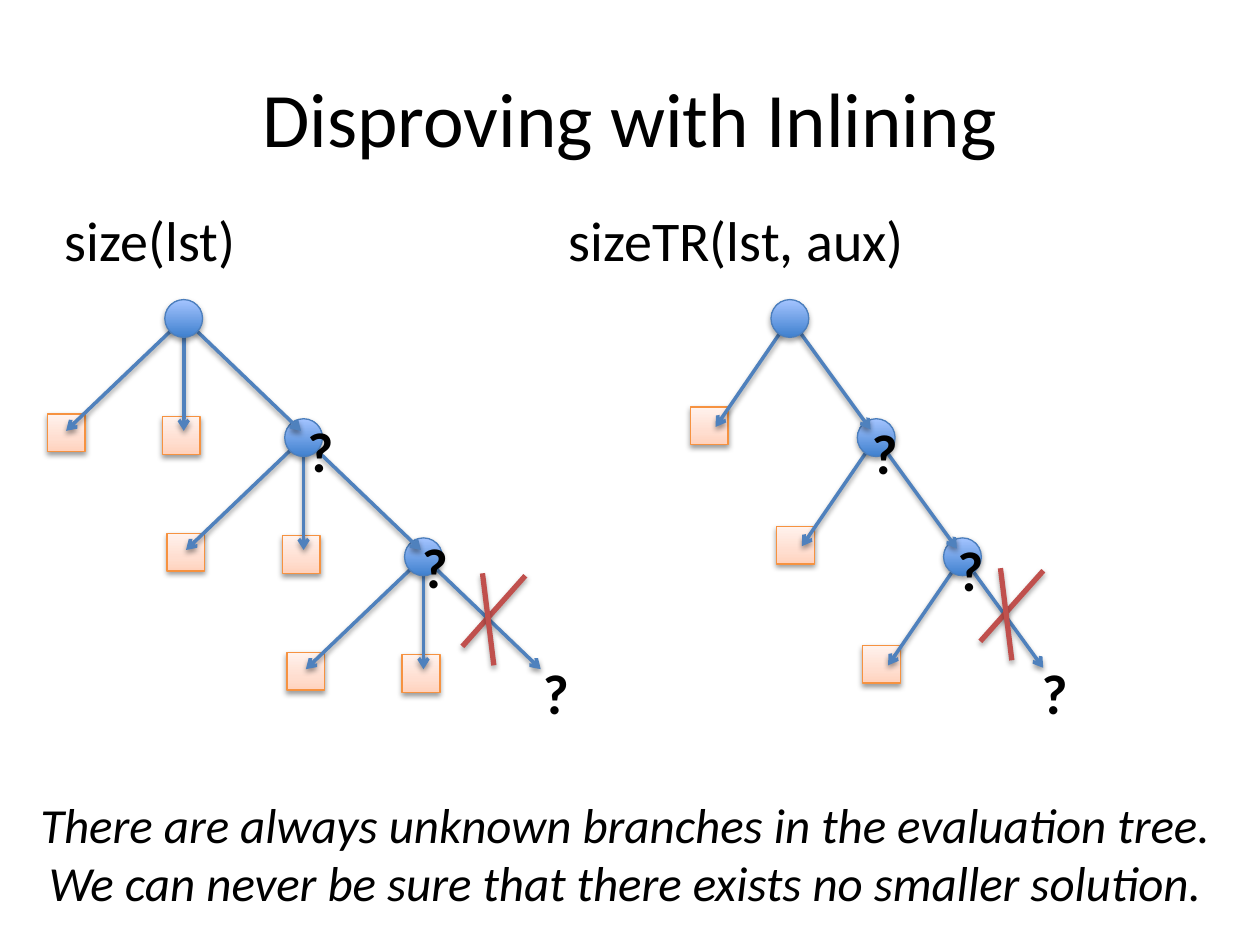
from copy import deepcopy
from pptx import Presentation
from pptx.dml.color import RGBColor
from pptx.enum import shapes, text
from pptx.oxml import parse_xml
from pptx.util import Pt

BLACK = RGBColor(0, 0, 0)
BLUE = RGBColor(0x4F, 0x81, 0xBD)
RED = RGBColor(0xC0, 0x50, 0x4D)
RIM = RGBColor(0x4B, 0x7E, 0xBC)
ORANGE = RGBColor(0xF6, 0x92, 0x40)
SKY = ((0, RGBColor(0x3F, 0x80, 0xCE)), (1, RGBColor(0xA4, 0xC4, 0xFF)))
PEACH = ((0, RGBColor(0xFF, 0xD2, 0xBD)), (0.35, RGBColor(0xFF, 0xDE, 0xD0)),
         (1, RGBColor(0xFF, 0xF2, 0xED)))
NS = 'xmlns:a="http://schemas.openxmlformats.org/drawingml/2006/main"'
SIDE = 21.6
MID = SIDE / 2


def shade(item, alpha):
    """Give a shape or connector a soft shadow below it."""
    item._element.spPr.append(parse_xml(
        f'<a:effectLst {NS}><a:outerShdw blurRad="39370" dist="{Pt(1.7)}" dir="5400000" '
        f'rotWithShape="0"><a:srgbClr val="000000"><a:alpha val="{alpha}000"/></a:srgbClr>'
        '</a:outerShdw></a:effectLst>'))


def write(slide, box, lines, size, bold=False, italic=False, center=False, wrap=False):
    """Place paragraphs of one style in a text box."""
    frame = slide.shapes.add_textbox(*map(Pt, box)).text_frame
    frame.word_wrap = wrap
    frame.vertical_anchor = text.MSO_ANCHOR.MIDDLE
    frame.text = "\n".join(lines)
    for para in frame.paragraphs:
        para.alignment = text.PP_ALIGN.CENTER if center else text.PP_ALIGN.LEFT
        font = para.font
        font.name, font.size, font.bold, font.italic = "Calibri", Pt(size), bold, italic
        font.color.rgb = BLACK


def mark(group, kind, x, y, stops, rim, alpha):
    """Draw a tree node with a vertical gradient."""
    node = group.shapes.add_shape(kind, Pt(x), Pt(y), Pt(SIDE), Pt(SIDE))
    node.fill.gradient()
    node.fill.gradient_angle = 90
    first = node.fill.gradient_stops[0].color
    listing = node._element.spPr.gradFill.gsLst
    for _ in stops[2:]:
        listing.append(deepcopy(listing[0]))
    for stop, (pos, color) in zip(node.fill.gradient_stops, stops):
        stop.position, stop.color.rgb = pos, color
    node.line.color.rgb, node.line.width = rim, Pt(0.75)
    shade(node, alpha)


def draw(group, start, end, color, width, alpha, arrow=False):
    """Draw a straight line, with an arrowhead if asked."""
    line = group.shapes.add_connector(shapes.MSO_CONNECTOR.STRAIGHT, *map(Pt, start + end))
    line.line.color.rgb, line.line.width = color, Pt(width)
    if arrow:
        line.line._get_or_add_ln().append(parse_xml(f'<a:tailEnd {NS} type="arrow"/>'))
    shade(line, alpha)


def branch(slide, x, y, leaves, tips):
    """Draw one node with its leaves and arrows from its top left corner."""
    group = slide.shapes.add_group_shape()
    for dx, dy in leaves:
        mark(group, shapes.MSO_SHAPE.RECTANGLE, x + dx, y + dy, PEACH, ORANGE, 38)
    for dx, dy in tips:
        draw(group, (x + MID, y + MID), (x + dx, y + dy), BLUE, 2, 38, True)
    mark(group, shapes.MSO_SHAPE.OVAL, x, y, SKY, RIM, 35)


def cross(slide, x, y):
    """Strike out a branch with two red strokes."""
    group = slide.shapes.add_group_shape()
    draw(group, (x, y + 41.8), (x + 36, y + 1.4), RED, 3, 35)
    draw(group, (x + 11.5, y), (x + 18, y + 52.6), RED, 3, 35)


def tree(slide, x, y, step, leaves, tips, doubts, strike):
    """Draw three branches, deepest first, with doubts and a strike."""
    for i in reversed(range(3)):
        branch(slide, x + i * step, y + i * 68.1, leaves, tips)
    for dx, dy in doubts:
        write(slide, (x + dx, y + dy, 29.5, 46.1), ["?"], 32, bold=True)
    cross(slide, x + strike[0], y + strike[1])


def main():
    """Build the slide."""
    deck = Presentation()
    deck.slide_width, deck.slide_height = Pt(720), Pt(540)
    slide = deck.slides.add_slide(deck.slide_layouts[6])
    write(slide, (36, 21.6, 648, 90), ["Disproving with Inlining"], 44, center=True, wrap=True)
    write(slide, (30, 113.8, 113, 46.1), ["size(lst)"], 32)
    write(slide, (318, 113.8, 208, 46.1), ["sizeTR(lst, aux)"], 32)
    tree(slide, 94.2, 171.2, 68.5, [(-1.4, 66.8), (-67.2, 65.4)],
         [(-56.4, 75), (MID, 75), (77.8, 75)],
         [(74.3, 62.8), (139.8, 129), (208.9, 201)], (170, 156.4))
    tree(slide, 440.6, 171.2, 49.3, [(-46.1, 61.4)], [(-31.7, 72.8), (56.9, 74.2)],
         [(50.4, 64.2), (99.4, 131.2), (147.6, 201)], (119.6, 153.5))
    write(slide, (1.4, 450, 711.4, 74.9),
          ["There are always unknown branches in the evaluation tree.",
           "We can never be sure that there exists no smaller solution."],
          28, italic=True, center=True, wrap=True)
    deck.save("out.pptx")


if __name__ == "__main__":
    main()
